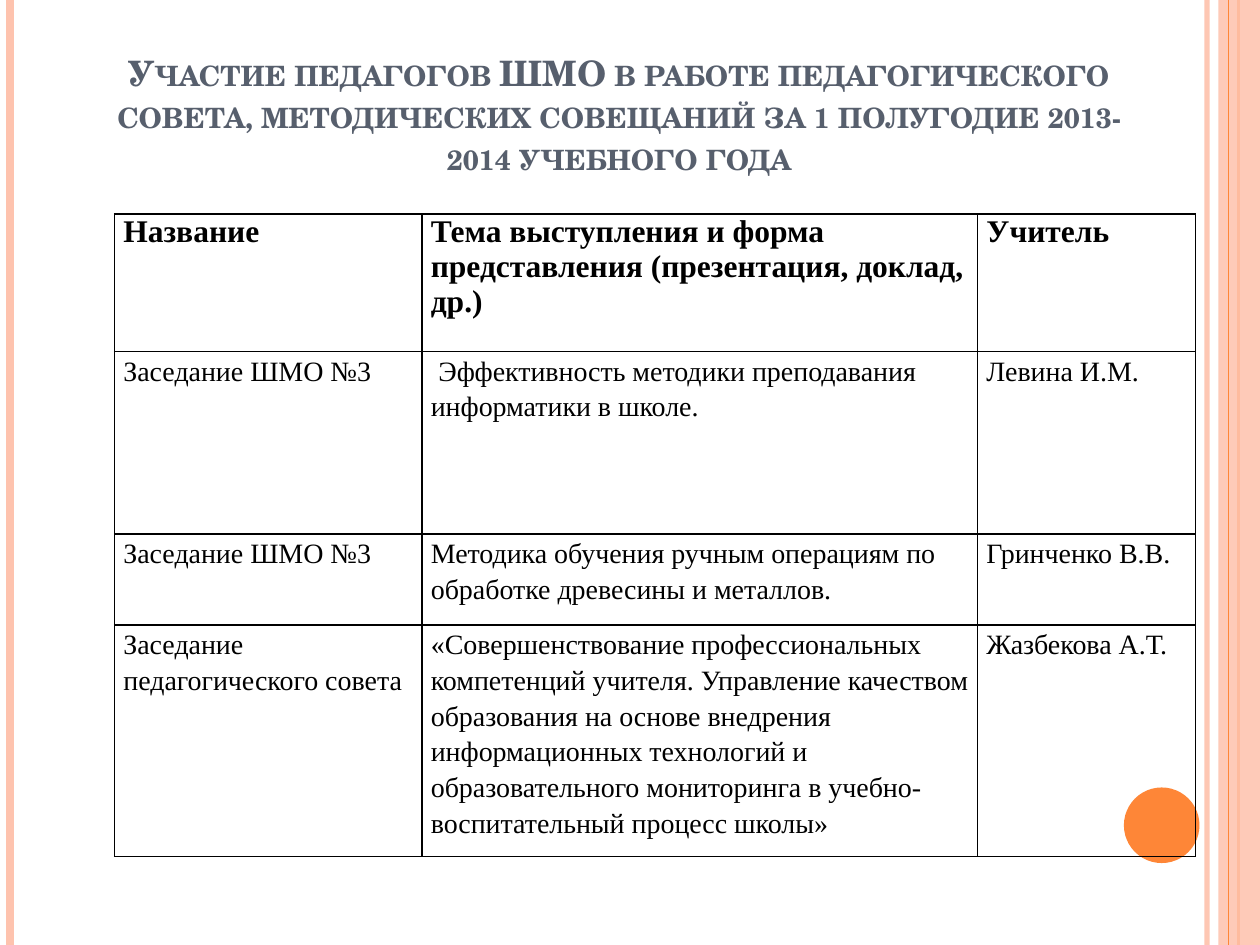
from typing import NamedTuple

from lxml import etree
from pptx import Presentation
from pptx import util as u
from pptx.dml.color import RGBColor
from pptx.enum import shapes, text
from pptx.oxml.ns import qn

COLORS = {"peach": "FEC3AE", "orange": "FE8637", "title": "575F6D", "black": "000000"}
SLIDE_WIDTH, SLIDE_HEIGHT = u.Inches(10), u.Inches(7.5)
TABLE_FONT = "Times New Roman"


class Stripe(NamedTuple):
    x: float
    color: str
    width: float
    opacity: int = 100


class Report(NamedTuple):
    event: str
    topic: str
    teacher: str
    height: float
    topic_indent: float = 0


HEADER = Report("Название",
                "Тема выступления и форма представления (презентация, доклад, др.)",
                "Учитель", 1.09)
REPORTS = [
    Report("Заседание ШМО №3", "Эффективность методики преподавания информатики в школе.",
           "Левина И.М.", 1.45, 0.06),
    Report("Заседание ШМО №3",
           "Методика обучения ручным операциям по обработке древесины и металлов.",
           "Гринченко В.В.", 0.72),
    Report("Заседание педагогического совета",
           "«Совершенствование профессиональных компетенций учителя. Управление качеством "
           "образования на основе внедрения информационных технологий и образовательного "
           "мониторинга в учебно-воспитательный процесс школы»",
           "Жазбекова А.Т.", 1.7),
]
COLUMN_WIDTHS = [2.44, 4.41, 1.73]


def rgb(name: str) -> RGBColor:
    return RGBColor.from_string(COLORS[name])


def set_opacity(shape, percent: int) -> None:
    color = next(shape._element.spPr.iter(qn("a:srgbClr")))
    etree.SubElement(color, qn("a:alpha")).set("val", str(percent * 1000))


def add_stripe(slide, stripe: Stripe) -> None:
    x = u.Inches(stripe.x)
    line = slide.shapes.add_connector(shapes.MSO_CONNECTOR.STRAIGHT, x, 0, x, SLIDE_HEIGHT)
    line.line.color.rgb = rgb(stripe.color)
    line.line.width = u.Pt(stripe.width)
    if stripe.opacity < 100:
        set_opacity(line, stripe.opacity)
    etree.SubElement(line._element.spPr, qn("a:effectLst"))


def add_solid(slide, kind, color: str, left: float, top: float, width: float, height: float):
    shape = slide.shapes.add_shape(kind, u.Inches(left), u.Inches(top),
                                   u.Inches(width), u.Inches(height))
    shape.shadow.inherit = False
    shape.fill.solid()
    shape.fill.fore_color.rgb = rgb(color)
    shape.line.fill.background()
    return shape


def add_title(slide, wording: str) -> None:
    box = slide.shapes.add_textbox(u.Inches(0.83), u.Inches(0.21),
                                   u.Inches(8.17), u.Inches(1.25))
    frame = box.text_frame
    frame.word_wrap = True
    frame.vertical_anchor = text.MSO_ANCHOR.BOTTOM
    paragraph = frame.paragraphs[0]
    paragraph.alignment = text.PP_ALIGN.CENTER
    run = paragraph.add_run()
    run.text = wording
    run._r.get_or_add_rPr().set("cap", "small")
    font = paragraph.font
    font.name, font.size, font.bold = "TeX Gyre Schola", u.Pt(20), True
    font.color.rgb = rgb("title")


def add_borders(cell) -> None:
    properties = cell._tc.get_or_add_tcPr()
    for side in ("lnL", "lnR", "lnT", "lnB"):
        border = etree.SubElement(properties, qn(f"a:{side}"), w=str(u.Pt(1)))
        fill = etree.SubElement(border, qn("a:solidFill"))
        etree.SubElement(fill, qn("a:srgbClr")).set("val", COLORS["black"])


def fill_cell(cell, wording: str, is_header: bool, indent: float = 0) -> None:
    add_borders(cell)
    cell.fill.background()
    cell.margin_left = cell.margin_right = u.Inches(0.07)
    cell.margin_top = cell.margin_bottom = 0
    cell.text = wording
    paragraph = cell.text_frame.paragraphs[0]
    if indent:
        paragraph._p.get_or_add_pPr().set("indent", str(u.Inches(indent)))
    if not is_header:
        paragraph.line_spacing = 1.15
    font = paragraph.font
    font.name, font.bold = TABLE_FONT, is_header
    font.size = u.Pt(18 if is_header else 16)
    font.color.rgb = rgb("black")


def add_report_table(slide) -> None:
    rows = [HEADER, *REPORTS]
    frame = slide.shapes.add_table(
        len(rows), len(COLUMN_WIDTHS), u.Inches(0.91), u.Inches(1.7),
        u.Inches(sum(COLUMN_WIDTHS)), u.Inches(sum(row.height for row in rows)))
    table = frame.table
    table.first_row = table.horz_banding = False
    for column, width in zip(table.columns, COLUMN_WIDTHS):
        column.width = u.Inches(width)
    for index, report in enumerate(rows):
        table.rows[index].height = u.Inches(report.height)
        is_header = report is HEADER
        fill_cell(table.cell(index, 0), report.event, is_header)
        fill_cell(table.cell(index, 1), report.topic, is_header, report.topic_indent)
        fill_cell(table.cell(index, 2), report.teacher, is_header)


def main() -> None:
    presentation = Presentation()
    presentation.slide_width, presentation.slide_height = SLIDE_WIDTH, SLIDE_HEIGHT
    slide = presentation.slides.add_slide(presentation.slide_layouts[6])

    # Side stripes and the right-hand band
    for stripe in (Stripe(9.58, "peach", 3, 93), Stripe(0.08, "peach", 4.5),
                   Stripe(9.83, "orange", 1.5)):
        add_stripe(slide, stripe)
    band = add_solid(slide, shapes.MSO_SHAPE.RECTANGLE, "peach", 9.67, 0, 0.33, 7.5)
    set_opacity(band, 87)
    add_stripe(slide, Stripe(9.75, "orange", 0.75))

    # Circle behind the table corner
    add_solid(slide, shapes.MSO_SHAPE.OVAL, "orange", 8.92, 6.25, 0.6, 0.6)

    # Title and table
    add_title(slide, "Участие педагогов ШМО в работе педагогического совета, "
                     "методических совещаний за 1 полугодие 2013-2014 учебного года")
    add_report_table(slide)
    presentation.save("out.pptx")


if __name__ == "__main__":
    main()
